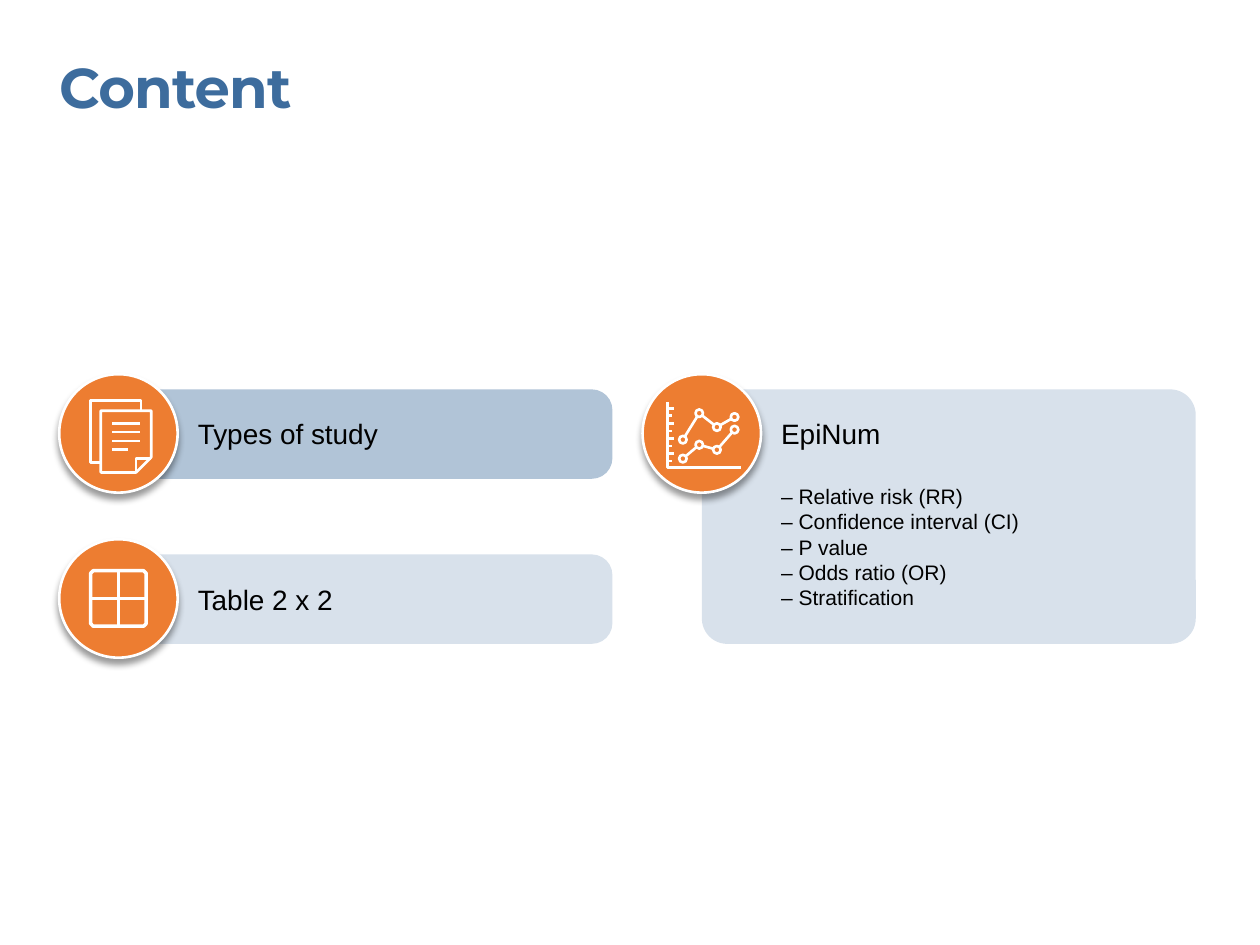
import math

from lxml import etree
from pptx import Presentation
from pptx import util as u
from pptx.dml.color import RGBColor
from pptx.enum import shapes, text
from pptx.oxml.ns import qn

COLORS = {"blue": "3D6C9D", "orange": "ED7D31", "white": "FFFFFF", "black": "000000"}
COLUMNS = [0.47, 5.1]
ROWS = [2.97, 4.28]
BADGE = 0.94
MARKER = 0.03
LIST = ["Relative risk (RR)", "Confidence interval (CI)", "P value",
        "Odds ratio (OR)", "Stratification"]


def rgb(name):
    """Return a palette colour."""
    return RGBColor.from_string(COLORS[name])


def add_alpha(clr, percent):
    """Give a colour element an opacity."""
    etree.SubElement(clr, qn("a:alpha")).set("val", str(percent * 1000))


def write(tf, lines, size=16, font="Arial", color="black", bold=False, first=True):
    """Write lines as paragraphs in one format."""
    tf.margin_left = tf.margin_right = tf.margin_top = tf.margin_bottom = 0
    tf.word_wrap = True
    tf.auto_size = text.MSO_AUTO_SIZE.NONE
    tf.vertical_anchor = text.MSO_ANCHOR.TOP
    for i, line in enumerate(lines):
        p = tf.paragraphs[0] if first and i == 0 else tf.add_paragraph()
        p.alignment = text.PP_ALIGN.LEFT
        r = p.add_run()
        r.text = line
        r.font.size, r.font.name, r.font.bold = u.Pt(size), font, bold
        r.font.color.rgb = rgb(color)


def add_title(s, title):
    """Place and format the slide title."""
    sp = s.shapes.title
    sp.left, sp.top = u.Inches(0.47), u.Inches(0.42)
    sp.width, sp.height = u.Inches(8.55), u.Inches(0.54)
    write(sp.text_frame, [title], size=32, font="Montserrat", color="blue", bold=True)
    sp.text_frame.paragraphs[0].runs[0].font._element.set("spc", "-50")


def add_label(s, x, y, h, label):
    """Add the label beside a badge and return its text frame."""
    tf = s.shapes.add_textbox(u.Inches(x + 1.1), u.Inches(y + 0.34),
                              u.Inches(3.1), u.Inches(h)).text_frame
    write(tf, [label])
    return tf


def add_preset(s, kind, x, y, w, h, fill, line=None):
    """Add a preset shape with a plain fill and line."""
    sp = s.shapes.add_shape(kind, *map(u.Inches, (x, y, w, h)))
    sp.shadow.inherit = False
    sp.fill.solid()
    sp.fill.fore_color.rgb = rgb(fill)
    if line:
        sp.line.color.rgb, sp.line.width = rgb(line), u.Pt(1.5)
    else:
        sp.line.fill.background()
    return sp


def add_card(s, x, y, h, opacity):
    """Add a translucent rounded card behind a badge."""
    sp = add_preset(s, shapes.MSO_SHAPE.ROUNDED_RECTANGLE,
                    x + BADGE / 2, y + 0.12, 3.92, h, "blue")
    sp.adjustments[0] = round(0.165 / h, 2) if h < 1 else 0.1
    add_alpha(sp._element.spPr.find(".//" + qn("a:srgbClr")), opacity)


def add_badge(s, x, y):
    """Add a round badge with a soft shadow below."""
    sp = add_preset(s, shapes.MSO_SHAPE.OVAL, x, y, BADGE, BADGE, "orange", "white")
    shadow = etree.SubElement(sp._element.spPr.find(qn("a:effectLst")), qn("a:outerShdw"),
                              blurRad=str(u.Pt(4)), dist=str(u.Pt(3)), dir="5400000")
    clr = etree.SubElement(shadow, qn("a:srgbClr"), val=COLORS["black"])
    add_alpha(clr, 40)


def add_strokes(s, x, y, contours, width=1.5):
    """Draw contours, given from the badge corner, as one white outline."""
    fb = None
    for points in contours:
        pts = [(u.Inches(x + dx), u.Inches(y + dy)) for dx, dy in points]
        if fb is None:
            fb = s.shapes.build_freeform(*pts[0])
        else:
            fb.move_to(*pts[0])
        fb.add_line_segments(pts[1:], close=False)
    sp = fb.convert_to_shape()
    sp.shadow.inherit = False
    sp.fill.background()
    sp.line.color.rgb, sp.line.width = rgb("white"), u.Pt(width)


def add_line(s, x, y, length):
    """Draw a level white line."""
    c = s.shapes.add_connector(shapes.MSO_CONNECTOR.STRAIGHT,
                               *map(u.Inches, (x, y, x + length, y)))
    c.line.color.rgb, c.line.width = rgb("white"), u.Pt(1.5)
    etree.SubElement(c._element.spPr, qn("a:effectLst"))


def ring(cx, cy):
    """Return the points of a round marker."""
    angles = [math.pi * i / 4 for i in range(9)]
    return [(cx + MARKER * math.cos(a), cy + MARKER * math.sin(a)) for a in angles]


def link(a, b):
    """Return the line between the edges of two markers."""
    part = MARKER / math.dist(a, b)
    dx, dy = (b[0] - a[0]) * part, (b[1] - a[1]) * part
    return [(a[0] + dx, a[1] + dy), (b[0] - dx, b[1] - dy)]


def add_pages_icon(s, x, y):
    """Draw two stacked pages with a folded corner."""
    back = [(0.33, 0.7), (0.25, 0.7), (0.25, 0.21), (0.65, 0.21), (0.65, 0.29)]
    front = [(0.33, 0.29), (0.73, 0.29), (0.73, 0.66), (0.61, 0.78), (0.33, 0.78),
             (0.33, 0.29)]
    fold = [(0.61, 0.78), (0.61, 0.67), (0.73, 0.67)]
    add_strokes(s, x, y, [back, front, fold])
    for i, length in enumerate([0.22, 0.22, 0.22, 0.13]):
        add_line(s, x + 0.42, y + 0.39 + 0.07 * i, length)


def add_grid_icon(s, x, y):
    """Draw a two by two grid with cut corners."""
    lo, mid, hi, cut = 0.25, 0.47, 0.69, 0.02
    frame = [(lo + cut, lo), (hi - cut, lo), (hi, lo + cut), (hi, hi - cut),
             (hi - cut, hi), (lo + cut, hi), (lo, hi - cut), (lo, lo + cut),
             (lo + cut, lo)]
    add_strokes(s, x, y, [frame, [(lo, mid), (hi, mid)], [(mid, lo), (mid, hi)]], width=2)


def add_chart_icon(s, x, y):
    """Draw a small line graph with axes, ticks and markers."""
    axes = [(0.2, 0.22), (0.2, 0.74), (0.78, 0.74)]
    ticks = [[(0.2, 0.27 + 0.06 * i), (0.23 if i % 2 else 0.25, 0.27 + 0.06 * i)]
             for i in range(8)]
    add_strokes(s, x, y, [axes] + ticks)
    for heights in [(0.52, 0.31, 0.42, 0.34), (0.67, 0.56, 0.6, 0.44)]:
        points = list(zip((0.32, 0.45, 0.59, 0.73), heights))
        add_strokes(s, x, y, [ring(*p) for p in points]
                    + [link(a, b) for a, b in zip(points, points[1:])])


def main():
    """Build the content slide."""
    prs = Presentation()
    prs.slide_width, prs.slide_height = u.Inches(10), u.Inches(7.5)
    s = prs.slides.add_slide(prs.slide_layouts[5])
    add_title(s, "Content")
    left, right = COLUMNS
    top, bottom = ROWS
    items = [
        (left, top, 0.71, 40, "Types of study", add_pages_icon),
        (left, bottom, 0.71, 20, "Table 2 x 2", add_grid_icon),
        (right, top, 2.02, 20, "EpiNum", add_chart_icon),
    ]
    for x, y, h, opacity, label, add_icon in items:
        add_card(s, x, y, h, opacity)
        tf = add_label(s, x, y, h - 0.45, label)
        add_badge(s, x, y)
        add_icon(s, x, y)
    tf.paragraphs[0].space_after = u.Pt(19)
    write(tf, [f"– {line}" for line in LIST], size=12, first=False)
    prs.save("out.pptx")


if __name__ == "__main__":
    main()
